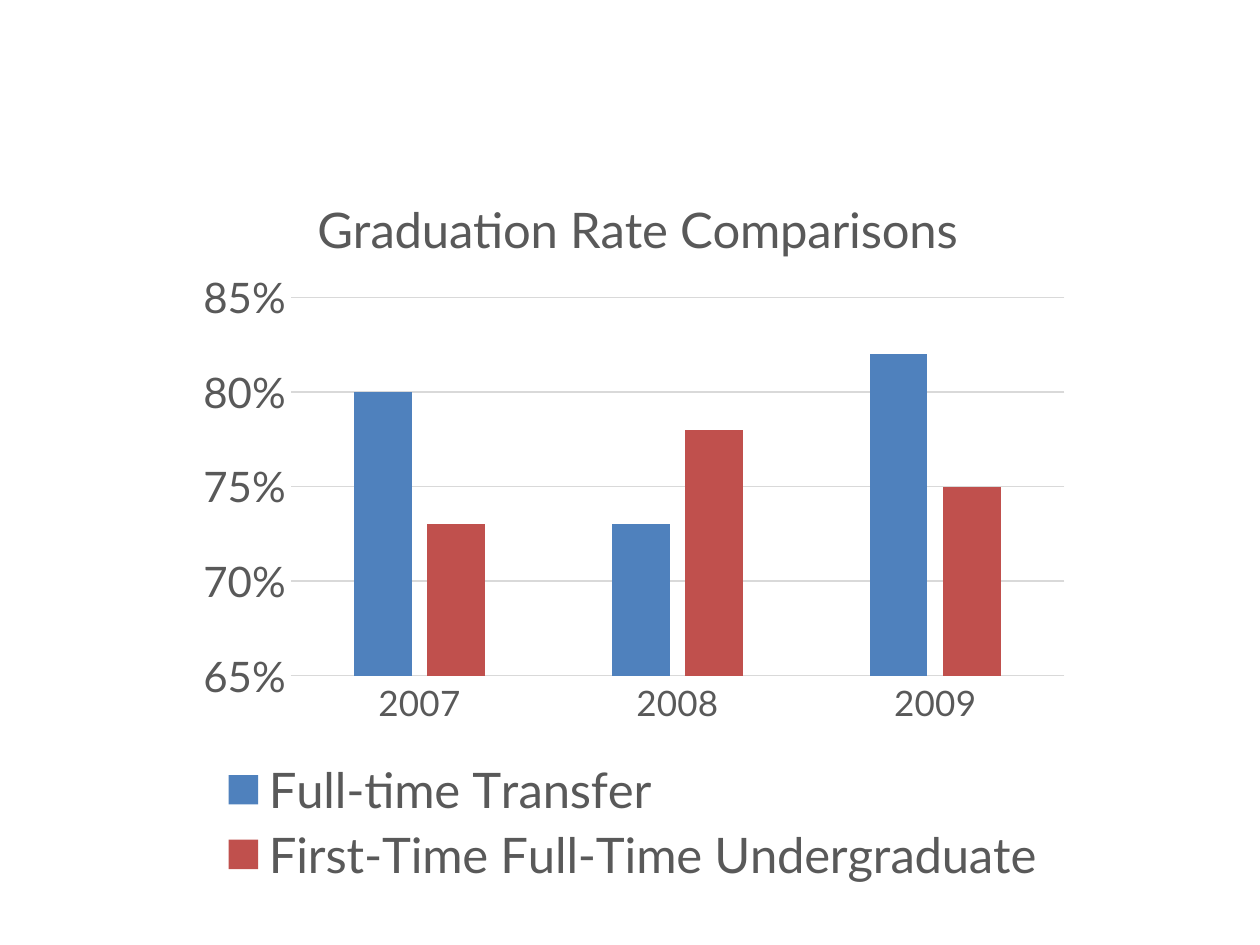
from pptx import Presentation
from pptx.chart.data import CategoryChartData
from pptx.dml.color import RGBColor
from pptx.enum.chart import XL_CHART_TYPE as ChartType, XL_LEGEND_POSITION as LegendPosition
from pptx.enum.chart import XL_TICK_MARK as TickMark
from pptx.oxml import parse_xml
from pptx.oxml.ns import nsdecls
from pptx.util import Inches, Pt

# Content
TITLE = "Graduation Rate Comparisons"
YEARS = ["2007", "2008", "2009"]
RATES = {
    "Full-time Transfer": (0.80, 0.73, 0.82),
    "First-Time Full-Time Undergraduate": (0.73, 0.78, 0.75),
}

THEME = {
    "font": "Lato",
    "text": "595959",
    "grid": "D9D9D9",
    "series": ["4F81BD", "C0504D"],
    "title_size": 28,
    "legend_size": 28,
    "value_size": 24,
    "year_size": 20,
}


def style_font(font, size):
    font.name = THEME["font"]
    font.size = Pt(size)
    font.bold = False
    font.color.rgb = RGBColor.from_string(THEME["text"])


def style_line(line):
    line.width = Pt(0.75)
    line.color.rgb = RGBColor.from_string(THEME["grid"])


def make_layout(target=None, **fractions):
    """Return a manual chart layout, as fractions of the chart area."""
    inner = f'<c:layoutTarget val="{target}"/>' if target else ""
    modes = "".join(f'<c:{key}Mode val="edge"/>' for key in ("x", "y"))
    sizes = "".join(f'<c:{key} val="{value}"/>' for key, value in fractions.items())
    return parse_xml(
        f'<c:layout {nsdecls("c")}><c:manualLayout>{inner}{modes}{sizes}'
        "</c:manualLayout></c:layout>"
    )


def set_layout(element, before, layout):
    """Replace the layout of a chart part, placing it before the named child."""
    for old in element.xpath("./c:layout"):
        element.remove(old)
    element.xpath(f"./{before}")[0].addprevious(layout)


def add_title(chart):
    chart.has_title = True
    frame = chart.chart_title.text_frame
    frame.text = TITLE
    style_font(frame.paragraphs[0].runs[0].font, THEME["title_size"])
    chart.chart_title.include_in_layout = False
    set_layout(chart.chart_title._element, "c:overlay", make_layout(x=0.14, y=0.05))


def style_axes(chart):
    years, values = chart.category_axis, chart.value_axis
    for axis, size in ((years, THEME["year_size"]), (values, THEME["value_size"])):
        axis.major_tick_mark = axis.minor_tick_mark = TickMark.NONE
        style_font(axis.tick_labels.font, size)
    style_line(years.format.line)
    values.format.line.fill.background()
    values.has_major_gridlines = True
    style_line(values.major_gridlines.format.line)
    values.minimum_scale, values.maximum_scale, values.major_unit = 0.65, 0.85, 0.05
    values.tick_labels.number_format = "0%"
    values.tick_labels.number_format_is_linked = False


def add_legend(chart):
    chart.has_legend = True
    legend = chart.legend
    legend.position = LegendPosition.BOTTOM
    legend.include_in_layout = False
    style_font(legend.font, THEME["legend_size"])
    set_layout(legend._element, "c:overlay", make_layout(x=0.04, y=0.81, w=0.92, h=0.18))


def main():
    presentation = Presentation()
    presentation.slide_width, presentation.slide_height = Inches(10), Inches(7.5)
    slide = presentation.slides.add_slide(presentation.slide_layouts[6])

    # Chart
    data = CategoryChartData(number_format="0%")
    data.categories = YEARS
    for name, values in RATES.items():
        data.add_series(name, values)
    chart = slide.shapes.add_chart(
        ChartType.COLUMN_CLUSTERED,
        Inches(1.45), Inches(1.17), Inches(7.14), Inches(5.95), data,
    ).chart
    chart.font.name = THEME["font"]
    chart.font.size = Pt(10)

    # Columns
    plot = chart.plots[0]
    plot.gap_width, plot.overlap = 219, -27
    plot.vary_by_categories = False
    for series, color in zip(plot.series, THEME["series"]):
        series.format.fill.solid()
        series.format.fill.fore_color.rgb = RGBColor.from_string(color)

    # Title, axes, legend and plot area
    add_title(chart)
    style_axes(chart)
    add_legend(chart)
    plot_area = chart._chartSpace.xpath("c:chart/c:plotArea")[0]
    set_layout(plot_area, "c:barChart",
               make_layout("inner", x=0.12, y=0.2, w=0.86, h=0.505))

    presentation.save("out.pptx")


if __name__ == "__main__":
    main()
